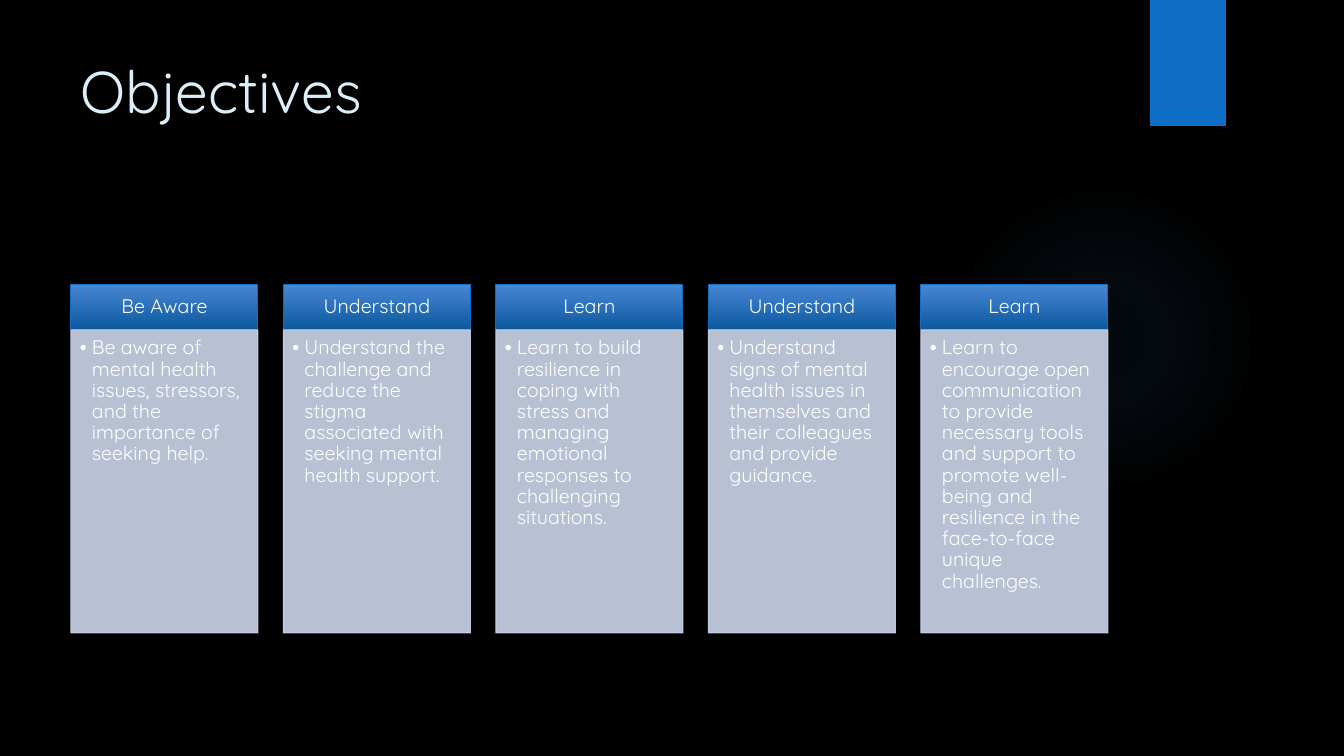
from dataclasses import dataclass

from pptx import Presentation
from pptx import util as u
from pptx.dml.color import RGBColor
from pptx.enum import shapes, text
from pptx.oxml import parse_xml
from pptx.oxml.ns import nsdecls

PX = 914400 / 100.8
FONT = "Quicksand"
WHITE = "FFFFFF"
PALE_BLUE = "CCD5EA"

# Column grid, in px
FIRST_LEFT, LAST_LEFT = 71, 921
COLUMN_WIDTH = 187
HEADER_TOP, HEADER_HEIGHT = 285, 45
BODY_TOP, BODY_HEIGHT = 330, 303


@dataclass
class Objective:
    heading: str
    detail: str


@dataclass
class Stop:
    percent: int
    colour: str
    alpha: int = 100


OBJECTIVES = [
    Objective("Be Aware", "Be aware of mental health issues, stressors, "
              "and the importance of seeking help."),
    Objective("Understand", "Understand the challenge and reduce the stigma "
              "associated with seeking mental health support."),
    Objective("Learn", "Learn to build resilience in coping with stress and managing "
              "emotional responses to challenging situations."),
    Objective("Understand", "Understand signs of mental health issues in themselves "
              "and their colleagues and provide guidance."),
    Objective("Learn", "Learn to encourage open communication to provide necessary tools "
              "and support to promote well-being and resilience in the face-to-face "
              "unique challenges."),
]
GLOW_STOPS = [Stop(0, "448AD7", 7), Stop(36, "448AD7", 6), Stop(69, "448AD7", 0)]
HEADER_STOPS = [Stop(0, "4786D3"), Stop(100, "0C599F")]
LINEAR_DOWN = '<a:lin ang="5400000" scaled="0"/>'
FROM_CENTRE = ('<a:path path="circle">'
               '<a:fillToRect l="50000" t="50000" r="50000" b="50000"/></a:path>')


def px(length: float) -> int:
    return round(length * PX)


def rgb(colour: str) -> RGBColor:
    return RGBColor.from_string(colour)


def add_box(slide, kind, left: float, top: float, width: float, height: float,
            fill: str | None = None, line: str | None = None):
    shape = slide.shapes.add_shape(kind, px(left), px(top), px(width), px(height))
    shape.shadow.inherit = False
    if fill:
        shape.fill.solid()
        shape.fill.fore_color.rgb = rgb(fill)
    else:
        shape.fill.background()
    if line:
        shape.line.color.rgb = rgb(line)
        shape.line.width = u.Pt(0.75)
    else:
        shape.line.fill.background()
    return shape


def set_gradient(shape, stops: list[Stop], direction: str) -> None:
    stop_xml = "".join(
        f'<a:gs pos="{stop.percent * 1000}"><a:srgbClr val="{stop.colour}">'
        f'<a:alpha val="{stop.alpha * 1000}"/></a:srgbClr></a:gs>' for stop in stops)
    gradient = parse_xml(f'<a:gradFill {nsdecls("a")} rotWithShape="1">'
                         f'<a:gsLst>{stop_xml}</a:gsLst>{direction}</a:gradFill>')
    properties = shape._element.spPr
    properties.replace(properties.find("./{*}noFill"), gradient)


def set_opacity(shape, percent: int) -> None:
    for colour in shape._element.spPr.iter("{*}srgbClr"):
        colour.append(parse_xml(f'<a:alpha {nsdecls("a")} val="{percent * 1000}"/>'))


def set_text(shape, content: str, size: int, colour: str, anchor,
             alignment, margins: tuple[int, int, int, int]):
    frame = shape.text_frame
    frame.text = content
    frame.word_wrap = True
    frame.vertical_anchor = anchor
    frame.margin_left, frame.margin_top, frame.margin_right, frame.margin_bottom = map(px, margins)
    paragraph = frame.paragraphs[0]
    paragraph.alignment = alignment
    paragraph.line_spacing = 0.9
    for run in paragraph.runs:
        run.font.name = FONT
        run.font.size = u.Pt(size)
        run.font.color.rgb = rgb(colour)
    return paragraph


def add_bullet(paragraph) -> None:
    properties = paragraph._p.get_or_add_pPr()
    properties.set("marL", str(px(12)))
    properties.set("indent", str(-px(12)))
    properties.append(parse_xml(f'<a:buFont {nsdecls("a")} typeface="Arial"/>'))
    properties.append(parse_xml(f'<a:buChar {nsdecls("a")} char="•"/>'))


def add_objective(slide, objective: Objective, left: float) -> None:
    header = add_box(slide, shapes.MSO_SHAPE.RECTANGLE, left, HEADER_TOP,
                     COLUMN_WIDTH, HEADER_HEIGHT, line="0F6FC6")
    set_gradient(header, HEADER_STOPS, LINEAR_DOWN)
    set_text(header, objective.heading, 14, WHITE, text.MSO_ANCHOR.MIDDLE,
             text.PP_ALIGN.CENTER, (11, 6, 11, 6))

    body = add_box(slide, shapes.MSO_SHAPE.RECTANGLE, left, BODY_TOP,
                   COLUMN_WIDTH, BODY_HEIGHT, PALE_BLUE, PALE_BLUE)
    set_opacity(body, 90)
    detail = set_text(body, objective.detail, 14, WHITE, text.MSO_ANCHOR.TOP,
                      text.PP_ALIGN.LEFT, (9, 8, 11, 12))
    add_bullet(detail)


def main() -> None:
    presentation = Presentation()
    presentation.slide_width, presentation.slide_height = px(1344), px(756)
    slide = presentation.slides.add_slide(presentation.slide_layouts[5])

    # Background, glow and corner tab
    slide.background.fill.solid()
    slide.background.fill.fore_color.rgb = rgb("000000")
    glow = add_box(slide, shapes.MSO_SHAPE.OVAL, 949, 184, 310, 310)
    set_gradient(glow, GLOW_STOPS, FROM_CENTRE)
    add_box(slide, shapes.MSO_SHAPE.RECTANGLE, 1150, 0, 76, 126, "0F6FC6")

    # Title
    title = slide.shapes.title
    title.left, title.top, title.width, title.height = map(px, (71, 50, 1037, 154))
    paragraph = set_text(title, "Objectives", 42, "DBEFF9", text.MSO_ANCHOR.TOP,
                         text.PP_ALIGN.LEFT, (10, 5, 10, 5))
    paragraph.line_spacing = 1.0

    # Objective columns
    pitch = (LAST_LEFT - FIRST_LEFT) / (len(OBJECTIVES) - 1)
    for index, objective in enumerate(OBJECTIVES):
        add_objective(slide, objective, FIRST_LEFT + index * pitch)

    presentation.save("out.pptx")


if __name__ == "__main__":
    main()
